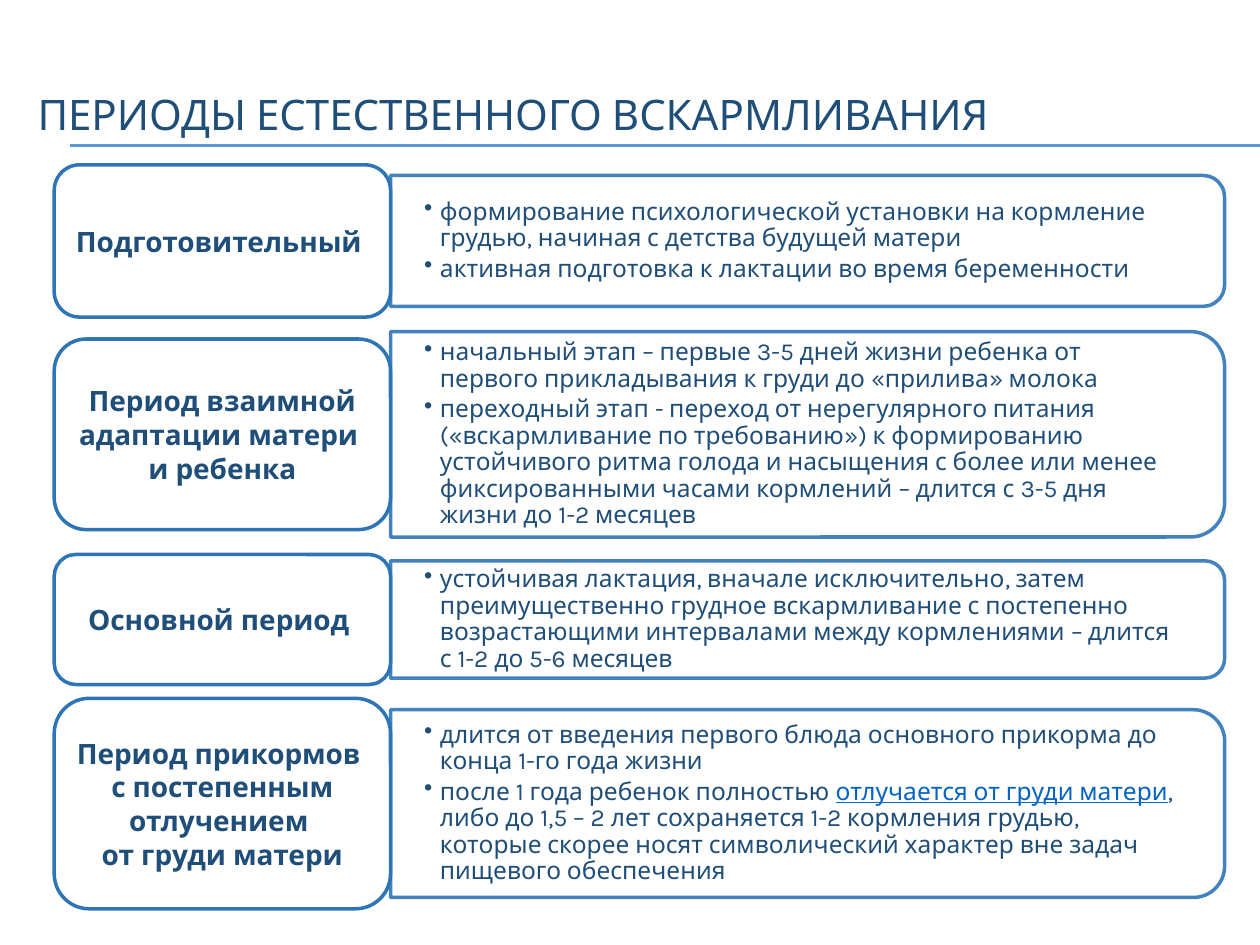
from dataclasses import dataclass

from lxml.etree import SubElement
from pptx import Presentation
from pptx.dml.color import RGBColor
from pptx.enum.shapes import MSO_CONNECTOR, MSO_SHAPE
from pptx.enum.text import MSO_ANCHOR, PP_ALIGN
from pptx.oxml.ns import qn
from pptx.slide import Slide
from pptx.util import Pt

NAVY = RGBColor(0x1F, 0x4E, 0x79)
BLUE = RGBColor(0x2E, 0x75, 0xB6)
SKY = RGBColor(0x5B, 0x9B, 0xD5)
LINK = RGBColor(0x05, 0x63, 0xC1)
WHITE = RGBColor(0xFF, 0xFF, 0xFF)

LABEL_LEFT, LABEL_WIDTH = 31, 192.2
PANEL_LEFT, PANEL_WIDTH = 223.2, 476.6
CORNER_INSET = 0.05

PERIODS = [
    (137.7, 87, 74.9, ["Подготовительный "], [
        ["формирование психологической установки на кормление грудью, "
         "начиная с детства будущей матери"],
        ["активная подготовка к лактации во время беременности"]]),
    (248.2, 108.9, 117.4, ["Период взаимной адаптации матери ", "и ребенка"], [
        ["начальный этап – первые 3-5 дней жизни ребенка от первого "
         "прикладывания к груди до «прилива» молока"],
        ["переходный этап - переход от нерегулярного питания («вскармливание "
         "по требованию») к формированию устойчивого ритма голода и насыщения "
         "с более или менее фиксированными часами кормлений – длится с 3-5 дня "
         "жизни до 1-2 месяцев"]]),
    (354, 74.3, 67, ["Основной период "], [
        ["устойчивая лактация, вначале исключительно, затем преимущественно "
         "грудное вскармливание с постепенно возрастающими интервалами между "
         "кормлениями – длится с 1-2 до 5-6 месяцев"]]),
    (459.2, 120.3, 107.3,
     ["Период прикормов ", "с постепенным отлучением ", "от груди матери"], [
        ["длится от введения первого блюда основного прикорма до конца 1-го года жизни"],
        ["после 1 года ребенок полностью ", "отлучается от груди матери",
         ", либо до 1,5 – 2 лет сохраняется 1-2 кормления грудью, которые скорее "
         "носят символический характер вне задач пищевого обеспечения"]]),
]


@dataclass
class PeriodPage:
    """Draws the elements of the current slide in one shared style."""

    page: Slide
    font: str = "Karla"

    def style(self, para, size, bold=False):
        para.font.name, para.font.size, para.font.bold = self.font, Pt(size), bold
        para.font.color.rgb = NAVY

    def frame(self, shape, side, edge):
        frame = shape.text_frame
        frame.word_wrap = True
        frame.vertical_anchor = MSO_ANCHOR.MIDDLE
        frame.margin_left = frame.margin_right = Pt(side)
        frame.margin_top = frame.margin_bottom = Pt(edge)
        return frame

    def text_box(self, left, top, width, height, side, edge):
        box = self.page.shapes.add_textbox(Pt(left), Pt(top), Pt(width), Pt(height))
        return self.frame(box, side, edge)

    def paragraphs(self, frame, count):
        return [frame.paragraphs[0]] + [frame.add_paragraph() for _ in range(count - 1)]

    def title(self, text):
        para = self.text_box(14.4, 31.7, 684, 66.2, 7.2, 3.6).paragraphs[0]
        para.text = text
        self.style(para, 24)

    def rule(self, top):
        line = self.page.shapes.add_connector(
            MSO_CONNECTOR.STRAIGHT, Pt(40.3), Pt(top), Pt(720), Pt(top))
        line.line.color.rgb, line.line.width = SKY, Pt(0.75)
        SubElement(line._element.spPr, qn("a:effectLst"))

    def outline(self, kind, left, top, width, height):
        box = self.page.shapes.add_shape(kind, Pt(left), Pt(top), Pt(width), Pt(height))
        box.shadow.inherit = False
        box.fill.solid()
        box.fill.fore_color.rgb = WHITE
        box.line.color.rgb, box.line.width = BLUE, Pt(2)
        return box

    def label(self, middle, height, lines):
        box = self.outline(MSO_SHAPE.ROUNDED_RECTANGLE, LABEL_LEFT,
                           middle - height / 2, LABEL_WIDTH, height)
        for para, text in zip(self.paragraphs(self.frame(box, 4.8, 2.4), len(lines)), lines):
            para.text = text
            para.alignment = PP_ALIGN.CENTER
            self.style(para, 16, bold=True)

    def panel(self, middle, height, items):
        box = self.outline(MSO_SHAPE.ROUND_2_SAME_RECTANGLE,
                           PANEL_LEFT + (PANEL_WIDTH - height) / 2,
                           middle - PANEL_WIDTH / 2, height, PANEL_WIDTH)
        box.rotation = 90
        for color in box._element.spPr.iter(qn("a:srgbClr")):
            SubElement(color, qn("a:alpha"), val="90000")
        inset = height * CORNER_INSET
        frame = self.text_box(PANEL_LEFT, middle - height / 2 + inset,
                              PANEL_WIDTH - inset, height - 2 * inset, 19.2, 9.8)
        for para, spans in zip(self.paragraphs(frame, len(items)), items):
            self.bullet(para, spans)

    def bullet(self, para, spans):
        self.style(para, 14)
        para.line_spacing, para.space_after = 0.9, Pt(2.3)
        properties = para._p.get_or_add_pPr()
        properties.set("marL", str(Pt(9)))
        properties.set("indent", str(-Pt(9)))
        mark = SubElement(properties, qn("a:buChar"), char="•")
        properties.find(qn("a:defRPr")).addprevious(mark)
        for index, text in enumerate(spans):
            span = para.add_run()
            span.text = text
            if index == 1:
                span.font.color.rgb, span.font.underline = LINK, True


def main():
    deck = Presentation()
    deck.slide_width, deck.slide_height = Pt(720), Pt(540)
    page = PeriodPage(deck.slides.add_slide(deck.slide_layouts[6]))
    for top in (82.8, 83.5):
        page.rule(top)
    page.title("ПЕРИОДЫ ЕСТЕСТВЕННОГО ВСКАРМЛИВАНИЯ")
    for middle, label_height, panel_height, lines, items in PERIODS:
        page.panel(middle, panel_height, items)
        page.label(middle, label_height, lines)
    deck.save("out.pptx")


if __name__ == "__main__":
    main()
